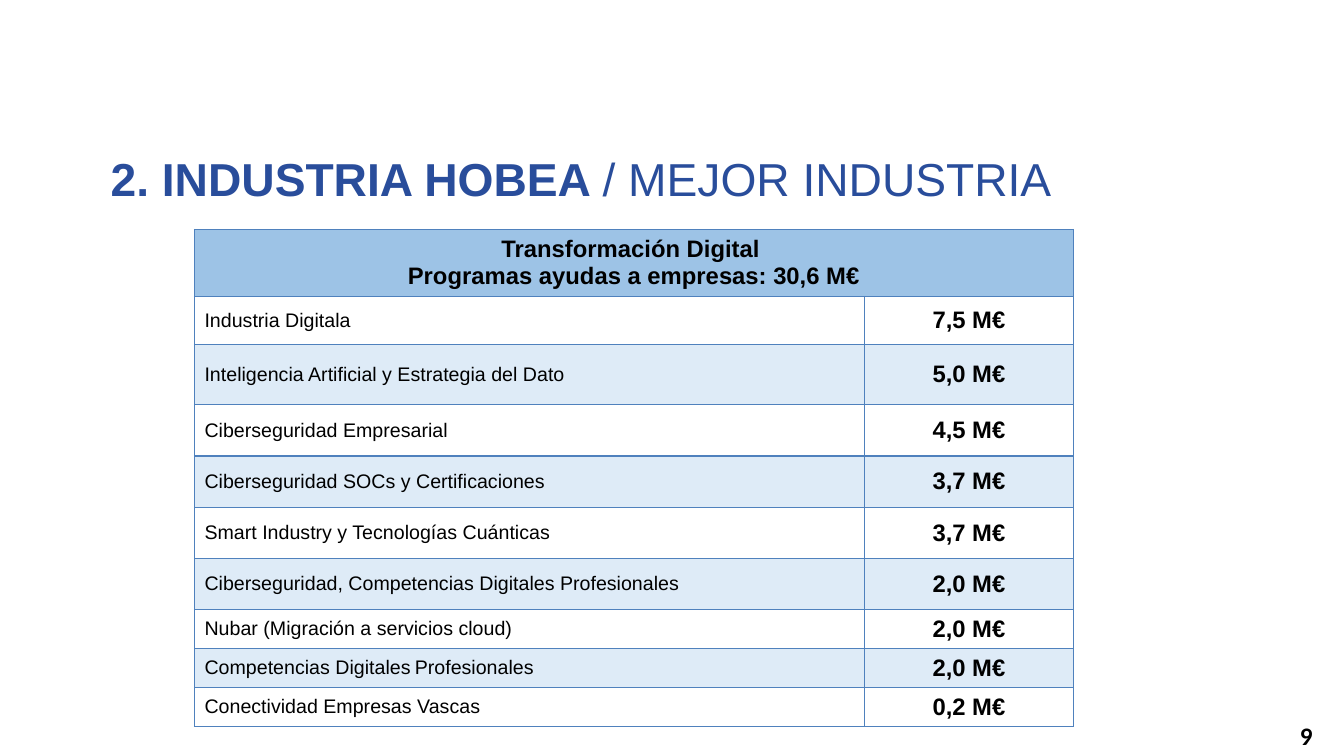
from lxml.etree import SubElement
from pptx import Presentation
from pptx.dml.color import RGBColor
from pptx.enum.text import MSO_ANCHOR, PP_ALIGN
from pptx.oxml.ns import qn
from pptx.util import Cm, Pt

TITLE = [("2. INDUSTRIA HOBEA ", True), ("/ MEJOR INDUSTRIA", False)]
HEADING = ["Transformación Digital ", "Programas ayudas a empresas: 30,6 M€"]
PROGRAMMES = [
    ("Industria Digitala", "7,5 M€", 1.21),
    ("Inteligencia Artificial y Estrategia del Dato", "5,0 M€", 1.52),
    ("Ciberseguridad Empresarial", "4,5 M€", 1.29),
    ("Ciberseguridad SOCs y Certificaciones", "3,7 M€", 1.29),
    ("Smart Industry y Tecnologías Cuánticas", "3,7 M€", 1.29),
    ("Ciberseguridad, Competencias Digitales Profesionales", "2,0 M€", 1.29),
    ("Nubar (Migración a servicios cloud)", "2,0 M€", 0.98),
    ("Competencias Digitales\tProfesionales", "2,0 M€", 0.98),
    ("Conectividad Empresas Vascas", "0,2 M€", 0.98),
]
PAGE = "9"
HEADING_HEIGHT = 1.69
COLUMN_WIDTHS = [16.89, 5.26]
NAME_TAB = 5.3

BLACK = RGBColor(0x00, 0x00, 0x00)
WHITE = RGBColor(0xFF, 0xFF, 0xFF)
TITLE_BLUE = RGBColor(0x29, 0x4D, 0x9B)
HEADING_BLUE = RGBColor(0x9D, 0xC3, 0xE6)
BAND_BLUE = RGBColor(0xDE, 0xEB, 0xF7)
BORDER_BLUE = RGBColor(0x4F, 0x81, 0xBD)


def write(paragraph, text, size=17, bold=True, color=BLACK, font="Arial", align=PP_ALIGN.LEFT):
    paragraph.alignment = align
    if "\t" in text:
        tabs = SubElement(paragraph._p.get_or_add_pPr(), qn("a:tabLst"))
        SubElement(tabs, qn("a:tab"), pos=str(Cm(NAME_TAB)), algn="l")
    run = paragraph.add_run()
    run.text = text
    run.font.name = font
    run.font.size = Pt(size)
    run.font.bold = bold
    run.font.color.rgb = color


def add_box(slide, left, top, width, height):
    frame = slide.shapes.add_textbox(Cm(left), Cm(top), Cm(width), Cm(height)).text_frame
    frame.word_wrap = True
    return frame.paragraphs[0]


def style_cell(cell, fill):
    cell.vertical_anchor = MSO_ANCHOR.MIDDLE
    properties = cell._tc.get_or_add_tcPr()
    for side in ("a:lnL", "a:lnR", "a:lnT", "a:lnB"):
        border = SubElement(properties, qn(side), w=str(Pt(1)))
        SubElement(SubElement(border, qn("a:solidFill")), qn("a:srgbClr"), val=str(BORDER_BLUE))
    cell.fill.solid()
    cell.fill.fore_color.rgb = fill


def add_programmes(slide):
    heights = [HEADING_HEIGHT] + [height for _, _, height in PROGRAMMES]
    table = slide.shapes.add_table(
        len(heights), len(COLUMN_WIDTHS), Cm(4.9), Cm(5.78),
        Cm(sum(COLUMN_WIDTHS)), Cm(sum(heights)),
    ).table
    for column, width in zip(table.columns, COLUMN_WIDTHS):
        column.width = Cm(width)
    for row, height in zip(table.rows, heights):
        row.height = Cm(height)

    heading = table.cell(0, 0)
    heading.merge(table.cell(0, 1))
    for cell in table.rows[0].cells:
        style_cell(cell, HEADING_BLUE)
    first, second = heading.text_frame.paragraphs[0], heading.text_frame.add_paragraph()
    for paragraph, line in zip((first, second), HEADING):
        write(paragraph, line, align=PP_ALIGN.CENTER)

    for index, (programme, amount, _) in enumerate(PROGRAMMES, start=1):
        name_cell, amount_cell = table.rows[index].cells
        for cell in (name_cell, amount_cell):
            style_cell(cell, WHITE if index % 2 else BAND_BLUE)
        write(name_cell.text_frame.paragraphs[0], programme, size=14, bold=False)
        write(amount_cell.text_frame.paragraphs[0], amount, align=PP_ALIGN.CENTER)


def main():
    presentation = Presentation()
    presentation.slide_width, presentation.slide_height = Cm(33.87), Cm(19.05)
    slide = presentation.slides.add_slide(presentation.slide_layouts[6])
    add_programmes(slide)
    write(add_box(slide, 32.51, 18.03, 1.24, 1.02), PAGE, size=18, font="Calibri")
    title = add_box(slide, 2.54, 3.67, 28.42, 1.68)
    for text, bold in TITLE:
        write(title, text, size=33, bold=bold, color=TITLE_BLUE)
    presentation.save("out.pptx")


if __name__ == "__main__":
    main()
